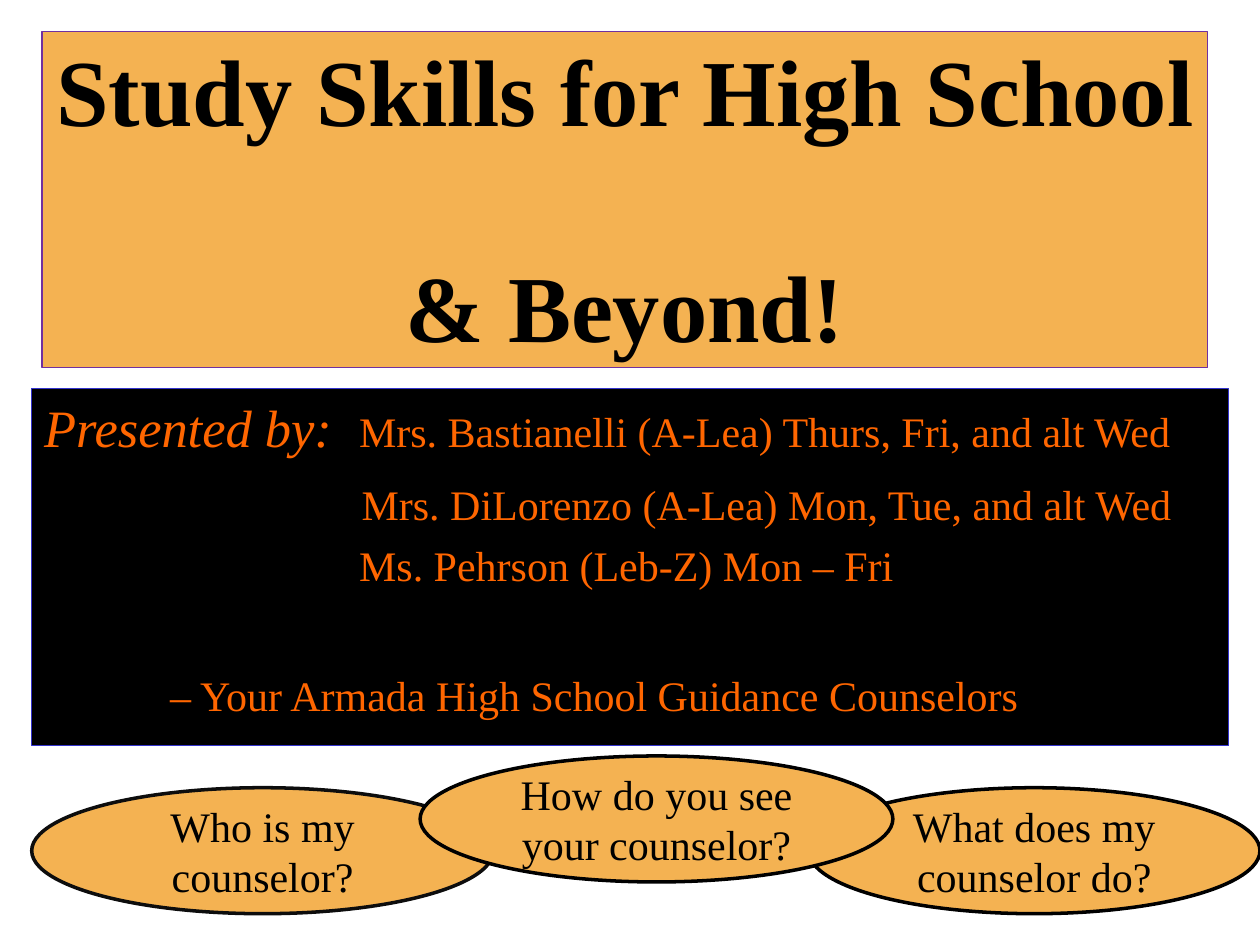
from pptx import Presentation
from pptx.dml.color import RGBColor
from pptx.enum.shapes import MSO_SHAPE
from pptx.enum.text import MSO_ANCHOR, PP_ALIGN
from pptx.util import Cm, Pt

BLACK = RGBColor(0x00, 0x00, 0x00)
NEAR_BLACK = RGBColor(0x0D, 0x0D, 0x0D)
AMBER = RGBColor(0xF4, 0xB2, 0x52)
ORANGE = RGBColor(0xFF, 0x66, 0x00)
PURPLE = RGBColor(0x70, 0x30, 0xA0)
BLUE = RGBColor(0x33, 0x33, 0xCC)

prs = Presentation()
prs.slide_width, prs.slide_height = Cm(25.4), Cm(19.05)
s = prs.slides.add_slide(prs.slide_layouts[6])


def add_box(kind, left, top, width, height, fill, line, weight):
    sp = s.shapes.add_shape(kind, Cm(left), Cm(top), Cm(width), Cm(height))
    sp.shadow.inherit = False
    sp.fill.solid()
    sp.fill.fore_color.rgb = fill
    sp.line.color.rgb = line
    sp.line.width = Pt(weight)
    sp.text_frame.word_wrap = True
    return sp.text_frame


def style(p, size, color, align, bold=False):
    p.alignment = align
    p.font.name = "Times New Roman"
    p.font.size = Pt(size)
    p.font.color.rgb = color
    p.font.bold = bold


# Title
tf = add_box(MSO_SHAPE.RECTANGLE, 0.85, 0.64, 23.5, 6.77, AMBER, PURPLE, 0.75)
tf.vertical_anchor = MSO_ANCHOR.TOP
tf.margin_top = tf.margin_bottom = Cm(0)
tf.text = "Study Skills for High School\n& Beyond!"
for p in tf.paragraphs:
    style(p, 54, BLACK, PP_ALIGN.CENTER, bold=True)
tf.paragraphs[1].space_before = Pt(59)

# Presenters: text, left indent in cm, space before in points
presenters = [
    ("Presented by:\tMrs. Bastianelli (A-Lea) Thurs, Fri, and alt Wed", 6.35, 0),
    ("Mrs. DiLorenzo (A-Lea) Mon, Tue, and alt Wed", 6.4, 11.8),
    ("Ms. Pehrson (Leb-Z) Mon – Fri", 6.35, 5.6),
    ("– Your Armada High School Guidance Counselors", 2.54, 45.6),
]
tf = add_box(MSO_SHAPE.RECTANGLE, 0.64, 7.83, 24.13, 7.2, BLACK, BLUE, 0.75)
tf.vertical_anchor = MSO_ANCHOR.TOP
tf.margin_top = Cm(0.14)
for i, (text, indent, before) in enumerate(presenters):
    p = tf.add_paragraph() if i else tf.paragraphs[0]
    style(p, 24, ORANGE, PP_ALIGN.LEFT)
    p.space_before = Pt(before)
    p._p.get_or_add_pPr().set("marL", str(Cm(indent)))
    label, tab, name = text.rpartition("\t")
    if label:
        # Hanging indent: the tab after the label stops at the names
        p._p.get_or_add_pPr().set("indent", str(-Cm(indent)))
        r = p.add_run()
        r.text = label
        r.font.size = Pt(30)
        r.font.italic = True
    r = p.add_run()
    r.text = tab + name

# Questions, the middle one in front
questions = [
    ("Who is my counselor?", 0.64, 15.88, 9.31, NEAR_BLACK),
    ("What does my counselor do?", 16.3, 15.88, 9.1, BLACK),
    ("How do you see your counselor?", 8.47, 15.24, 9.53, BLACK),
]
for text, left, top, width, line in questions:
    tf = add_box(MSO_SHAPE.OVAL, left, top, width, 2.54, AMBER, line, 2)
    tf.vertical_anchor = MSO_ANCHOR.MIDDLE
    tf.text = text
    style(tf.paragraphs[0], 24, BLACK, PP_ALIGN.CENTER)

prs.save("out.pptx")
